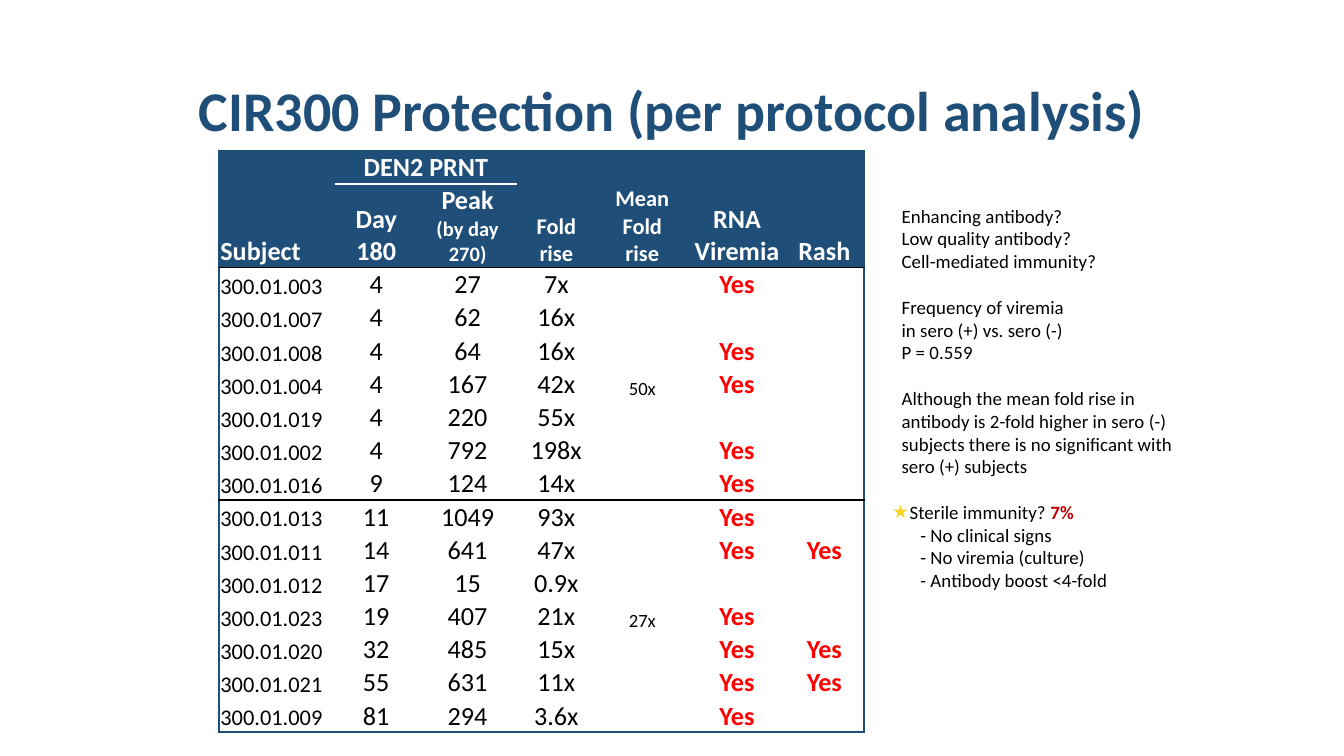
"""Build the CIR300 protection slide with its table and notes."""
from lxml.etree import SubElement as Sub
from pptx import Presentation
from pptx.dml.color import RGBColor as RGB
from pptx.enum.text import MSO_ANCHOR as Anchor, MSO_AUTO_SIZE as Auto, PP_ALIGN as Align
from pptx.oxml.ns import qn
from pptx.util import Inches, Pt

NAVY, WHITE, BLACK, RED = "1F4E79", "FFFFFF", "000000", "FF0000"


def hue(code):
    return RGB.from_string(code)


def write(para, text, size, color=BLACK, bold=False, face="Calibri"):
    run = para.add_run()
    run.text = text
    form = {"size": Pt(size), "bold": bold, "name": face}
    for key, value in form.items():
        setattr(run.font, key, value)
    run.font.color.rgb = hue(color)


deck = Presentation()
deck.slide_width = Inches(10)
deck.slide_height = Inches(10 * 9 / 16)
slide = deck.slides.add_slide(deck.slide_layouts[5])

title = slide.shapes.title
place = {"left": 0.69, "top": 0.3, "width": 8.62, "height": 1.09}
for key, value in place.items():
    setattr(title, key, Inches(value))
frame = title.text_frame
frame.auto_size = Auto.NONE
frame.vertical_anchor = Anchor.MIDDLE
para = frame.paragraphs[0]
para.alignment, para.line_spacing = Align.CENTER, 0.9
write(para, "CIR300 Protection (per protocol analysis)", 30, NAVY, True)

heads = [
    ["", "DEN2 PRNT", "", "", "", "", ""],
    ["Subject", "Day 180", "Peak\n(by day 270)", "Fold\nrise", "Mean\nFold\nrise", "RNA Viremia", "Rash"],
]
data = [
    ["300.01.003", "4", "27", "7x", "", "Yes", ""],
    ["300.01.007", "4", "62", "16x", "", "", ""],
    ["300.01.008", "4", "64", "16x", "", "Yes", ""],
    ["300.01.004", "4", "167", "42x", "50x", "Yes", ""],
    ["300.01.019", "4", "220", "55x", "", "", ""],
    ["300.01.002", "4", "792", "198x", "", "Yes", ""],
    ["300.01.016", "9", "124", "14x", "", "Yes", ""],
    ["300.01.013", "11", "1049", "93x", "", "Yes", ""],
    ["300.01.011", "14", "641", "47x", "", "Yes", "Yes"],
    ["300.01.012", "17", "15", "0.9x", "", "", ""],
    ["300.01.023", "19", "407", "21x", "27x", "Yes", ""],
    ["300.01.020", "32", "485", "15x", "", "Yes", "Yes"],
    ["300.01.021", "55", "631", "11x", "", "Yes", "Yes"],
    ["300.01.009", "81", "294", "3.6x", "", "Yes", ""],
]
rows = heads + data
wide = [0.86, 0.62, 0.74, 0.58, 0.7, 0.71, 0.59]
table = slide.shapes.add_table(
    len(rows), len(wide), Inches(1.63), Inches(1.12), Inches(sum(wide)), Inches(4.27)).table
table.first_row = table.horz_banding = False
table._tbl.tblPr.find(qn("a:tableStyleId")).text = "{2D5ABB26-0587-4C30-8999-92F81FD0307C}"
for col, width in zip(table.columns, wide):
    col.width = Inches(width)
for i, row in enumerate(table.rows):
    row.height = Inches(0.61 if i == 1 else 0.24)
table.cell(0, 1).merge(table.cell(0, 2))

sizes = {0: 12, 4: 10}
inset = {"margin_left": 0.01, "margin_right": 0.01, "margin_top": 0.01, "margin_bottom": 0}
for i, row in enumerate(rows):
    for j, text in enumerate(row):
        cell = table.cell(i, j)
        head = i < len(heads)
        for key, value in inset.items():
            setattr(cell, key, Inches(value))
        cell.vertical_anchor = Anchor.TOP if i == 0 else Anchor.BOTTOM

        rule = {0: NAVY, 2: BLACK, 9: BLACK, 16: NAVY}
        if j in (1, 2):
            rule[1] = WHITE
        edges = {
            "lnL": NAVY if j == 0 else None,
            "lnR": NAVY if j == len(wide) - 1 else None,
            "lnT": rule.get(i),
            "lnB": rule.get(i + 1),
        }
        for tag, color in edges.items():
            line = Sub(cell._tc.get_or_add_tcPr(), qn(f"a:{tag}"), w=str(Pt(1)))
            if color:
                Sub(Sub(line, qn("a:solidFill")), qn("a:srgbClr"), val=color)
            else:
                Sub(line, qn("a:noFill"))
        if head:
            cell.fill.solid()
            cell.fill.fore_color.rgb = hue(NAVY)
        else:
            cell.fill.background()

        for k, part in enumerate(text.split("\n")):
            para = cell.text_frame.paragraphs[0] if k == 0 else cell.text_frame.add_paragraph()
            para.alignment = Align.LEFT if j == 0 else Align.CENTER
            if not part:
                Sub(para._p, qn("a:endParaRPr"), sz="1000")
            elif head:
                size = 11 if part.startswith("(") else 12 if j in (3, 4) else 14
                write(para, part, size, WHITE, True)
            else:
                yes = part == "Yes"
                write(para, part, sizes.get(j, 14), RED if yes else BLACK, yes)

notes = [
    ("Enhancing antibody?", 0, 0),
    ("Low quality antibody?", 0, 0),
    ("Cell-mediated immunity?", 0, 0),
    ("Frequency of viremia", 12.3, 0),
    ("in sero (+) vs. sero (-)", 0, 0),
    ("P = 0.559", 0, 0),
    ("Although the mean fold rise in antibody is 2-fold higher in sero (-) subjects "
     "there is no significant with sero (+) subjects", 12.3, 0),
    ("Sterile immunity? ", 12.3, 0.06),
    ("- No clinical signs", 0, 0.14),
    ("- No viremia (culture)", 0, 0.14),
    ("- Antibody boost <4-fold", 0, 0.14),
]
frame = slide.shapes.add_textbox(Inches(6.61), Inches(1.47), Inches(2.22), Inches(3)).text_frame
frame.word_wrap = True
for i, (text, gap, indent) in enumerate(notes):
    para = frame.paragraphs[0] if i == 0 else frame.add_paragraph()
    para.space_before = Pt(gap)
    para._p.get_or_add_pPr().set("marL", str(Inches(indent)))
    write(para, text, 10.13)
    if text.startswith("Sterile"):
        write(para, "7%", 10.13, "C00000", True)

star = slide.shapes.add_textbox(Inches(6.54), Inches(3.67), Inches(0.31), Inches(0.27)).text_frame
star.word_wrap = True
write(star.paragraphs[0], "★", 10.13, "F9D425", face="Arial")

deck.save("out.pptx")
